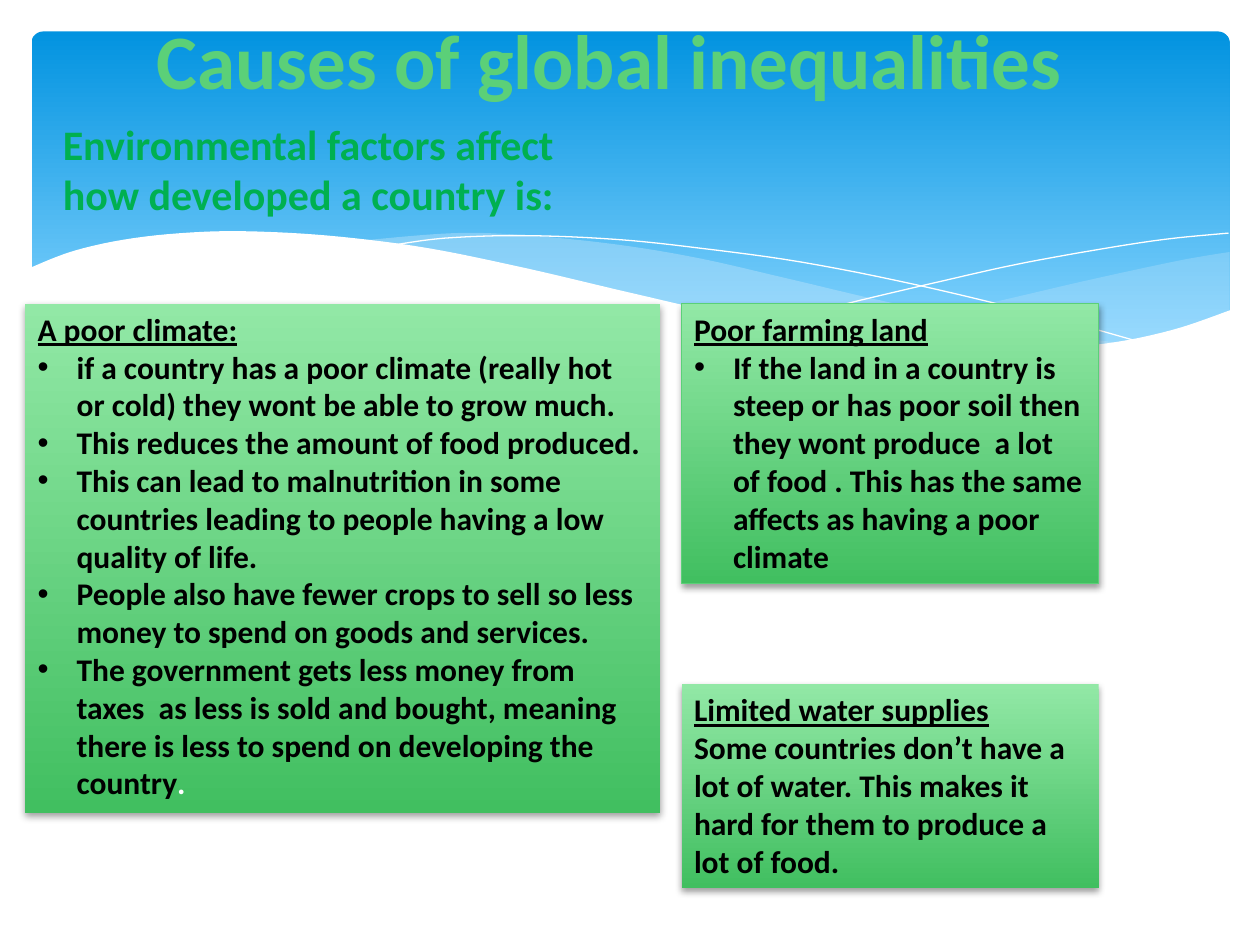
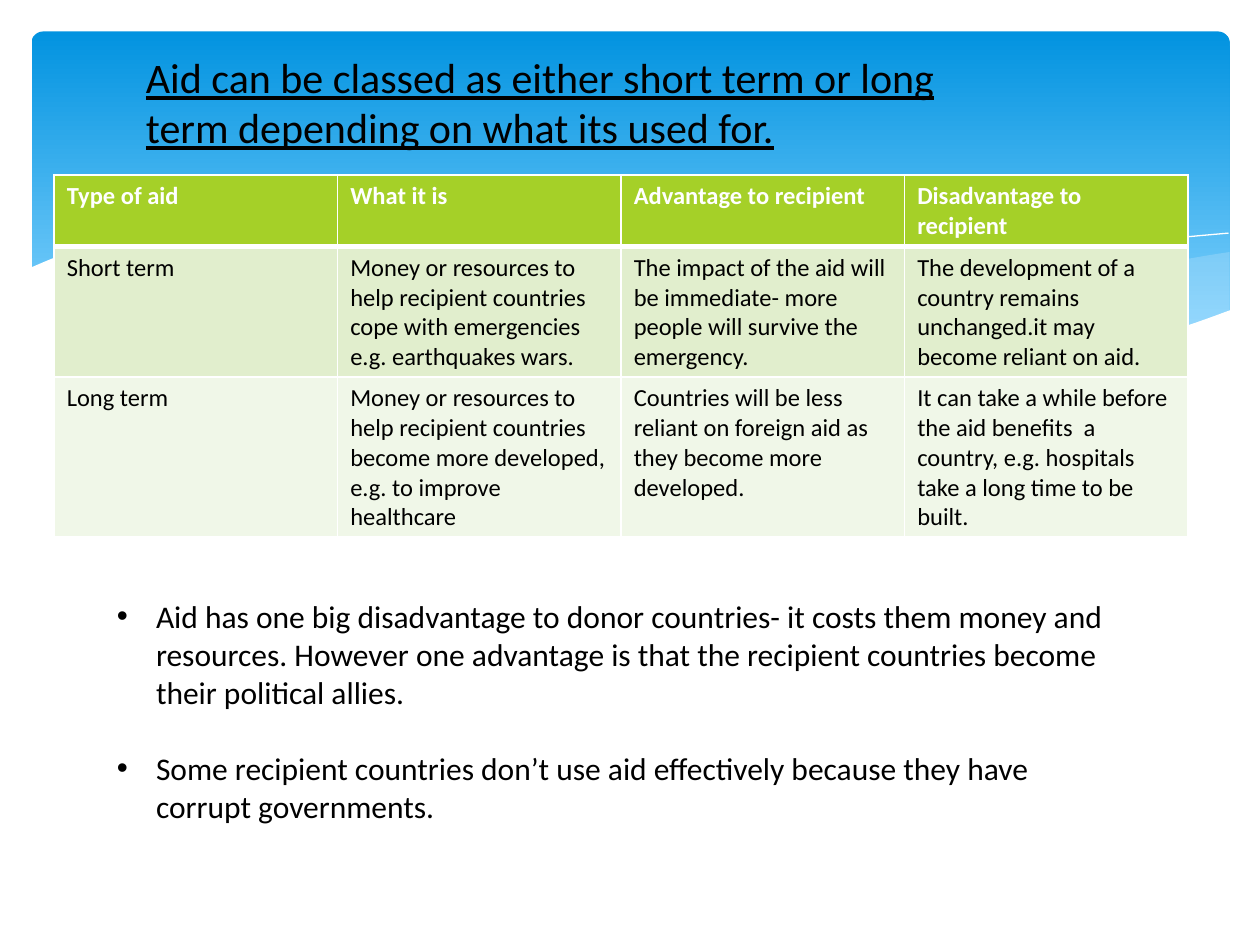
from lxml import etree
from pptx import Presentation
from pptx.dml.color import RGBColor
from pptx.enum import shapes, text
from pptx.oxml.ns import qn
from pptx.util import Inches, Pt

FONT = "Calibri"
COLORS = {
    "sky_top": "0293E0", "sky_bottom": "83D3FE", "wave": "C6E7FC",
    "white": "FFFFFF", "black": "000000",
    "title": "5BD078", "subtitle": "00B050",
    "panel_top": "92E8A6", "panel_bottom": "41BF60",
    "header": "A5D028", "row_odd": "E1EECD", "row_even": "F0F7E8",
}
RIGHT_WAVE = [
    [(9.76, 2), (9.35, 2.07), (8.61, 2.23), (7.79, 2.42), (7.06, 2.57), (6.61, 2.65)],
    [(6.61, 2.65), (7.19, 2.72), (7.81, 2.77), (8.35, 2.77), (8.89, 2.72),
     (9.35, 2.62), (9.76, 2.47)],
]
MIDDLE_WAVE = [
    [(8.93, 2.73), (8.07, 2.6), (7.06, 2.4), (6.29, 2.22), (5.55, 2.05),
     (4.89, 1.94), (4.2, 1.87), (3.61, 1.85), (2.86, 1.91)],
    [(2.86, 1.91), (3.62, 2.03), (4.49, 2.22), (5.3, 2.4), (6.01, 2.55),
     (6.8, 2.68), (7.48, 2.76), (8.18, 2.78), (8.93, 2.73)],
]
WHITE_WAVE = [
    [(9.77, 2.46), (9.3, 2.62), (8.75, 2.73), (8.09, 2.77), (7.44, 2.74),
     (6.68, 2.65), (5.79, 2.5), (5.03, 2.33), (4.18, 2.13), (3.4, 1.97),
     (2.71, 1.88), (2.11, 1.84), (1.61, 1.84), (1.06, 1.89), (0.59, 1.99),
     (0.23, 2.13)],
    [(0.23, 3.29), (9.77, 3.29)],
]
FALLING_LINE = [(3.09, 1.95), (3.53, 1.89), (4.16, 1.87), (4.89, 1.9), (5.56, 1.97),
                (6.36, 2.08), (7.27, 2.26), (8.31, 2.51), (9.07, 2.72)]
RISING_LINE = [(6.13, 2.57), (6.72, 2.41), (7.48, 2.23), (8.06, 2.1), (8.66, 1.99),
               (9.24, 1.9), (9.75, 1.85)]
AID_ROWS = [
    ["Type of aid", "What it is", "Advantage to recipient", "Disadvantage to recipient"],
    ["Short term",
     "Money or resources to help recipient countries cope with emergencies e.g. earthquakes wars.",
     "The impact of the aid will be immediate- more people will survive the emergency.",
     "The development of a country remains unchanged.it may become reliant on aid."],
    ["Long term",
     "Money or resources to help recipient countries become more developed, e.g. to improve healthcare",
     "Countries will be less reliant on foreign aid as they become more developed.",
     "It can take a while before the aid benefits  a country, e.g. hospitals take a long time to be built."],
]
CLIMATE_POINTS = [
    "if a country has a poor climate (really hot or cold) they wont be able to grow much.",
    "This reduces the amount of food produced.",
    "This can lead to malnutrition in some countries leading to people having a low quality of life.",
    "People also have fewer crops to sell so less money to spend on goods and services.",
    "The government gets less money from taxes  as less is sold and bought, meaning there is less to spend on developing the country",
]
FARMING_POINT = ("If the land in a country is steep or has poor soil then they wont produce  a lot "
                 "of food . This has the same affects as having a poor climate")
WATER_TEXT = ("Some countries don’t have a lot of water. This makes it hard for them to produce "
              "a lot of food.")
DONOR_POINTS = [
    "Aid has one big disadvantage to donor countries- it costs them money and resources. "
    "However one advantage is that the recipient countries become their political allies.",
    "Some recipient countries don’t use aid effectively because they have corrupt governments.",
]


def rgb(name):
    return RGBColor.from_string(COLORS[name])


def add_run(p, content, size=18, color="black", bold=False, underline=False):
    r = p.add_run()
    r.text = content
    r.font.name = FONT
    r.font.size = Pt(size)
    r.font.bold = bold
    r.font.underline = underline
    r.font.color.rgb = rgb(color)


def add_para(tf, content, bullet=False, align=text.PP_ALIGN.LEFT, gap=0, **font):
    p = tf.paragraphs[0]
    if p.runs:
        p = tf.add_paragraph()
    p.alignment = align
    p.space_after = Pt(gap)
    if bullet:
        pPr = p._p.get_or_add_pPr()
        pPr.set("marL", str(Inches(0.31)))
        pPr.set("indent", str(-Inches(0.31)))
        etree.SubElement(pPr, qn("a:buFont"), typeface="Arial")
        etree.SubElement(pPr, qn("a:buChar"), char="•")
    add_run(p, content, **font)
    return p


def add_text_box(sl, box):
    tf = sl.shapes.add_textbox(*map(Inches, box)).text_frame
    tf.word_wrap = True
    return tf


def fill_gradient(sp, top, bottom, end=1):
    sp.fill.gradient()
    sp.fill.gradient_angle = 270
    for stop, color, position in zip(sp.fill.gradient_stops, (top, bottom), (0, end)):
        stop.color.rgb = rgb(color)
        stop.position = position


def add_panel(sl, box, heading, outline=None):
    sp = sl.shapes.add_shape(shapes.MSO_SHAPE.RECTANGLE, *map(Inches, box))
    fill_gradient(sp, "panel_top", "panel_bottom")
    if outline:
        sp.line.color.rgb = rgb(outline)
        sp.line.width = Pt(0.75)
    else:
        sp.line.fill.background()
    sp.shadow.inherit = False
    effects = sp._element.spPr.find(qn("a:effectLst"))
    shadow = etree.SubElement(effects, qn("a:outerShdw"), blurRad=str(Pt(4)),
                              dist=str(Pt(2)), dir="5400000", rotWithShape="0")
    tint = etree.SubElement(shadow, qn("a:srgbClr"), val=COLORS["black"])
    etree.SubElement(tint, qn("a:alpha"), val="38000")
    tf = sp.text_frame
    tf.word_wrap = True
    tf.vertical_anchor = text.MSO_ANCHOR.TOP
    add_para(tf, heading, bold=True, underline=True)
    return tf


def smooth(knots, steps=6):
    if len(knots) < 3:
        return knots
    ends = [knots[0], *knots, knots[-1]]
    points = [knots[0]]
    for a, b, c, d in zip(ends, ends[1:], ends[2:], ends[3:]):
        for i in range(1, steps + 1):
            t = i / steps
            points.append(tuple(
                b[k] + (c[k] - a[k]) * t / 2
                + (2 * a[k] - 5 * b[k] + 4 * c[k] - d[k]) * t ** 2 / 2
                + (3 * b[k] - a[k] - 3 * c[k] + d[k]) * t ** 3 / 2
                for k in (0, 1)))
    return points


def add_curve(sl, curves, fill=None, alpha=100):
    points = [(Inches(x), Inches(y)) for knots in curves for x, y in smooth(knots)]
    builder = sl.shapes.build_freeform(*points[0])
    builder.add_line_segments(points[1:], close=fill is not None)
    sp = builder.convert_to_shape()
    sp.shadow.inherit = False
    if fill:
        sp.fill.solid()
        sp.fill.fore_color.rgb = rgb(fill)
        sp.line.fill.background()
        tint = sp._element.spPr.find(qn("a:solidFill"))[0]
        etree.SubElement(tint, qn("a:alpha"), val=str(alpha * 1000))
    else:
        sp.fill.background()
        sp.line.color.rgb = rgb("white")
        sp.line.width = Pt(0)


def add_backdrop(sl):
    sky = sl.shapes.add_shape(shapes.MSO_SHAPE.ROUNDED_RECTANGLE,
                              *map(Inches, (0.25, 0.25, 9.51, 2.7)))
    sky.adjustments[0] = 0.034
    sky.shadow.inherit = False
    sky.line.fill.background()
    fill_gradient(sky, "sky_top", "sky_bottom", end=0.9)
    add_curve(sl, RIGHT_WAVE, "wave", 29)
    add_curve(sl, MIDDLE_WAVE, "wave", 40)
    add_curve(sl, [FALLING_LINE])
    add_curve(sl, [RISING_LINE])
    add_curve(sl, WHITE_WAVE, "white")


def add_border(cell, side, width):
    ln = etree.SubElement(cell._tc.get_or_add_tcPr(), qn("a:ln" + side), w=str(Pt(width)))
    fill = etree.SubElement(ln, qn("a:solidFill"))
    etree.SubElement(fill, qn("a:srgbClr"), val=COLORS["white"])


def add_aid_table(sl, rows, box):
    table = sl.shapes.add_table(len(rows), len(rows[0]), *map(Inches, box)).table
    fills = ("header", "row_odd", "row_even")
    for i, row in enumerate(rows):
        for j, content in enumerate(row):
            cell = table.cell(i, j)
            for side, width in (("L", 1), ("R", 1), ("T", 3 if i == 1 else 1),
                                ("B", 3 if i == 0 else 1)):
                add_border(cell, side, width)
            cell.fill.solid()
            cell.fill.fore_color.rgb = rgb(fills[i])
            add_para(cell.text_frame, content, size=14, bold=i == 0,
                     color="black" if i else "white")


def add_slide(prs):
    sl = prs.slides.add_slide(prs.slide_layouts[6])
    add_backdrop(sl)
    return sl


def build_causes(prs):
    sl = add_slide(prs)
    add_para(add_text_box(sl, (0.59, 0.05, 8.5, 0.84)), "Causes of global inequalities",
             align=text.PP_ALIGN.CENTER, size=44, color="title", bold=True)
    add_para(add_text_box(sl, (0.4, 0.89, 4.47, 0.91)),
             "Environmental factors affect how developed a country is:",
             size=24, color="subtitle", bold=True)
    climate = add_panel(sl, (0.2, 2.41, 5.04, 4.04), "A poor climate:")
    for point in CLIMATE_POINTS:
        p = add_para(climate, point, bullet=True, bold=True)
    add_run(p, ".", color="white", bold=True)
    farming = add_panel(sl, (5.41, 2.41, 3.31, 2.22), "Poor farming land", outline="title")
    add_para(farming, FARMING_POINT, bullet=True, bold=True)
    water = add_panel(sl, (5.41, 5.43, 3.31, 1.62), "Limited water supplies")
    add_para(water, WATER_TEXT, bold=True)


def build_aid(prs):
    sl = add_slide(prs)
    add_aid_table(sl, AID_ROWS, (0.43, 1.39, 9, 1.23))
    add_para(add_text_box(sl, (1.06, 0.36, 6.93, 0.91)),
             "Aid can be classed as either short term or long term depending on what its used for.",
             size=24, underline=True)
    donors = add_text_box(sl, (0.83, 4.69, 8.11, 1.92))
    for point in DONOR_POINTS:
        add_para(donors, point, bullet=True, gap=22)


def main():
    prs = Presentation()
    prs.slide_width, prs.slide_height = Inches(10), Inches(7.5)
    build_causes(prs)
    build_aid(prs)
    prs.save("out.pptx")


if __name__ == "__main__":
    main()
